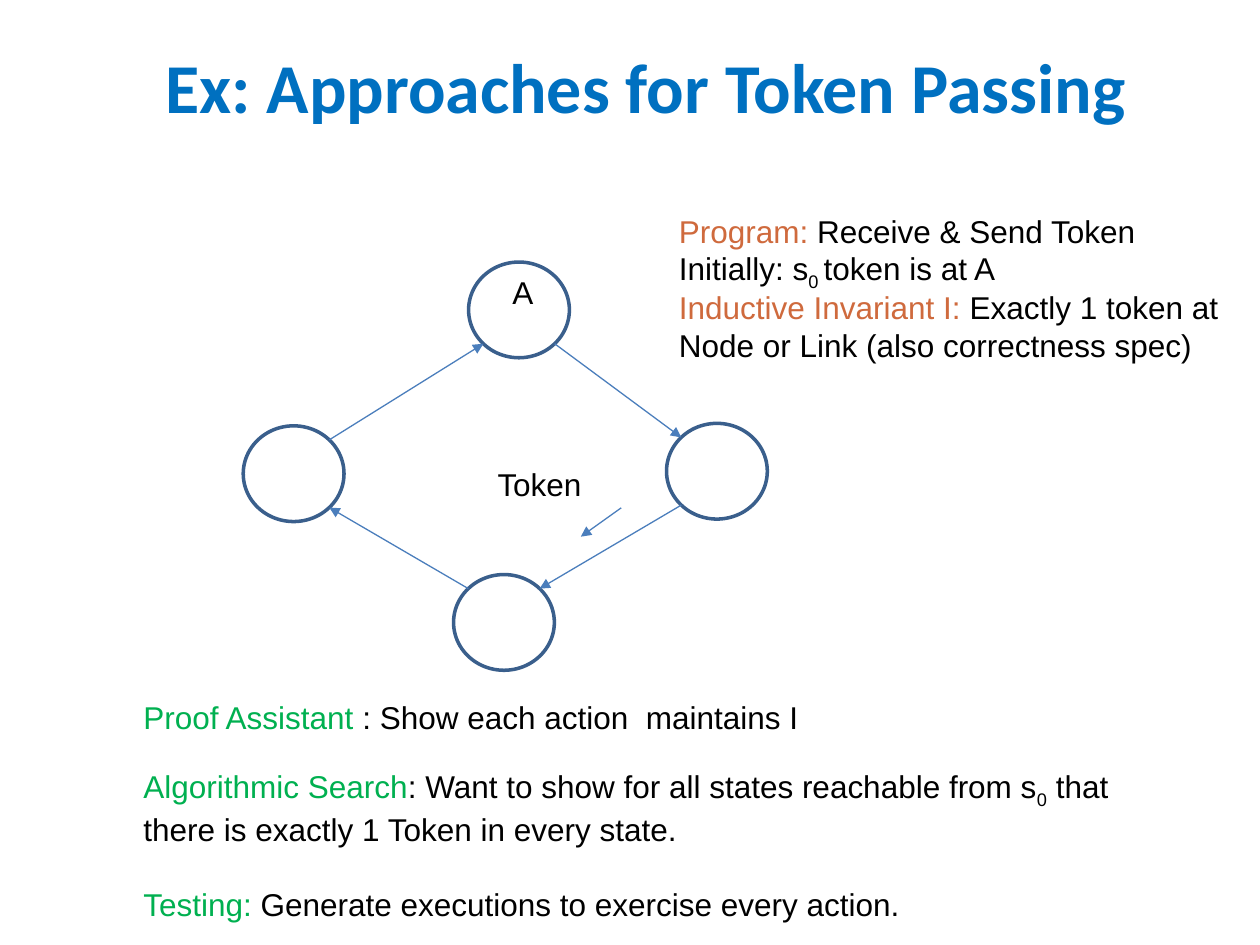
from dataclasses import dataclass
from math import sqrt

from lxml.etree import SubElement
from pptx import Presentation
from pptx.dml.color import RGBColor
from pptx.enum.shapes import MSO_CONNECTOR, MSO_SHAPE
from pptx.enum.text import MSO_AUTO_SIZE, PP_ALIGN
from pptx.oxml.ns import qn
from pptx.util import Pt


@dataclass(frozen=True)
class Theme:
    title: RGBColor = RGBColor(0x00, 0x70, 0xC0)
    body: RGBColor = RGBColor(0x00, 0x00, 0x00)
    program: RGBColor = RGBColor(0xCF, 0x6A, 0x3D)
    method: RGBColor = RGBColor(0x00, 0xB0, 0x50)
    node: RGBColor = RGBColor(0x3A, 0x5F, 0x8C)
    link: RGBColor = RGBColor(0x4B, 0x7E, 0xBC)
    title_font: str = "Calibri"
    body_font: str = "Arial"
    title_size: float = 40
    body_size: float = 18
    node_width: float = 2
    link_width: float = 0.75


@dataclass(frozen=True)
class Span:
    text: str
    color: RGBColor = Theme.body
    subscript: bool = False


class SlideBuilder:
    NODE_WIDTH, NODE_HEIGHT = 57.6, 54.7

    def __init__(self, slide, theme):
        self.slide = slide
        self.theme = theme

    def _text_frame(self, left, top, width, height, wrap):
        box = self.slide.shapes.add_textbox(Pt(left), Pt(top), Pt(width), Pt(height))
        box.text_frame.word_wrap = wrap
        return box.text_frame

    def title(self, text, left, top, width, height):
        frame = self._text_frame(left, top, width, height, wrap=True)
        frame.text = text
        heading = frame.paragraphs[0]
        heading.alignment = PP_ALIGN.CENTER
        font = heading.runs[0].font
        font.name, font.size, font.bold = self.theme.title_font, Pt(self.theme.title_size), True
        font.color.rgb = self.theme.title

    def text(self, lines, left, top, width, height, wrap=False, gap_before=None):
        """Write lines of spans; gap_before maps a line index to points of space."""
        frame = self._text_frame(left, top, width, height, wrap)
        frame.auto_size = MSO_AUTO_SIZE.SHAPE_TO_FIT_TEXT
        for index, spans in enumerate(lines):
            paragraph = frame.add_paragraph() if index else frame.paragraphs[0]
            if gap_before and index in gap_before:
                paragraph.space_before = Pt(gap_before[index])
            for span in spans:
                self._run(paragraph, span)

    def _run(self, paragraph, span):
        run = paragraph.add_run()
        run.text = span.text
        run.font.name = self.theme.body_font
        run.font.size = Pt(self.theme.body_size)
        run.font.color.rgb = span.color
        if span.subscript:
            run._r.get_or_add_rPr().set("baseline", "-25000")

    def node(self, center):
        x, y = center
        circle = self.slide.shapes.add_shape(
            MSO_SHAPE.OVAL,
            Pt(x - self.NODE_WIDTH / 2), Pt(y - self.NODE_HEIGHT / 2),
            Pt(self.NODE_WIDTH), Pt(self.NODE_HEIGHT))
        circle.shadow.inherit = False
        circle.fill.background()
        circle.line.color.rgb = self.theme.node
        circle.line.width = Pt(self.theme.node_width)

    def arrow(self, start, end):
        connector = self.slide.shapes.add_connector(
            MSO_CONNECTOR.STRAIGHT, *(Pt(value) for value in (*start, *end)))
        connector.line.color.rgb = self.theme.link
        connector.line.width = Pt(self.theme.link_width)
        SubElement(connector.line._get_or_add_ln(), qn("a:tailEnd"), type="triangle")
        SubElement(connector._element.spPr, qn("a:effectLst"))

    def link(self, source, target):
        """Join two nodes at the diagonal points that face each other."""
        toward_x = 1 if target[0] > source[0] else -1
        toward_y = 1 if target[1] > source[1] else -1
        dx = toward_x * self.NODE_WIDTH / 2 / sqrt(2)
        dy = toward_y * self.NODE_HEIGHT / 2 / sqrt(2)
        self.arrow((source[0] + dx, source[1] + dy), (target[0] - dx, target[1] - dy))


def main():
    presentation = Presentation()
    presentation.slide_width, presentation.slide_height = Pt(720), Pt(540)
    theme = Theme()
    builder = SlideBuilder(
        presentation.slides.add_slide(presentation.slide_layouts[6]), theme)

    builder.title("Ex: Approaches for Token Passing", 36, 21.6, 666, 71.3)

    # Token ring, clockwise from node A
    ring = [(296.6, 177.1), (409.7, 269.3), (288, 355.7), (167.8, 270.7)]
    for center in ring:
        builder.node(center)
    for source, target in zip(ring, ring[1:] + ring[:1]):
        builder.link(source, target)
    builder.text([[Span("A")]], 285.8, 152.6, 31.7, 28.8, wrap=True)
    builder.text([[Span("Token")]], 277.2, 262.1, 68.4, 28.8, wrap=True)
    builder.arrow((355, 290.2), (331.9, 306.7))

    builder.text([
        [Span("Program:", theme.program), Span(" Receive & Send Token")],
        [Span("Initially: s"), Span("0 ", subscript=True), Span("token is at A")],
    ], 380.9, 117.4, 277.9, 51.1)
    builder.text([
        [Span("Inductive Invariant I:", theme.program), Span(" Exactly 1 token at")],
        [Span("Node or Link (also correctness spec)")],
    ], 380.9, 161.3, 325.4, 51.1)

    builder.text([
        [Span("Proof Assistant ", theme.method), Span(": Show each action  maintains I")],
    ], 74.9, 395.3, 397.4, 28.8)
    builder.text([
        [Span("Algorithmic Search", theme.method),
         Span(": Want to show for all states reachable from s"),
         Span("0", subscript=True), Span(" that")],
        [Span("there is exactly 1 Token in every state.")],
        [Span("Testing:", theme.method), Span(" Generate executions to exercise every action.")],
    ], 74.9, 434.9, 576.7, 94.3, gap_before={2: 21})

    presentation.save("out.pptx")


if __name__ == "__main__":
    main()
